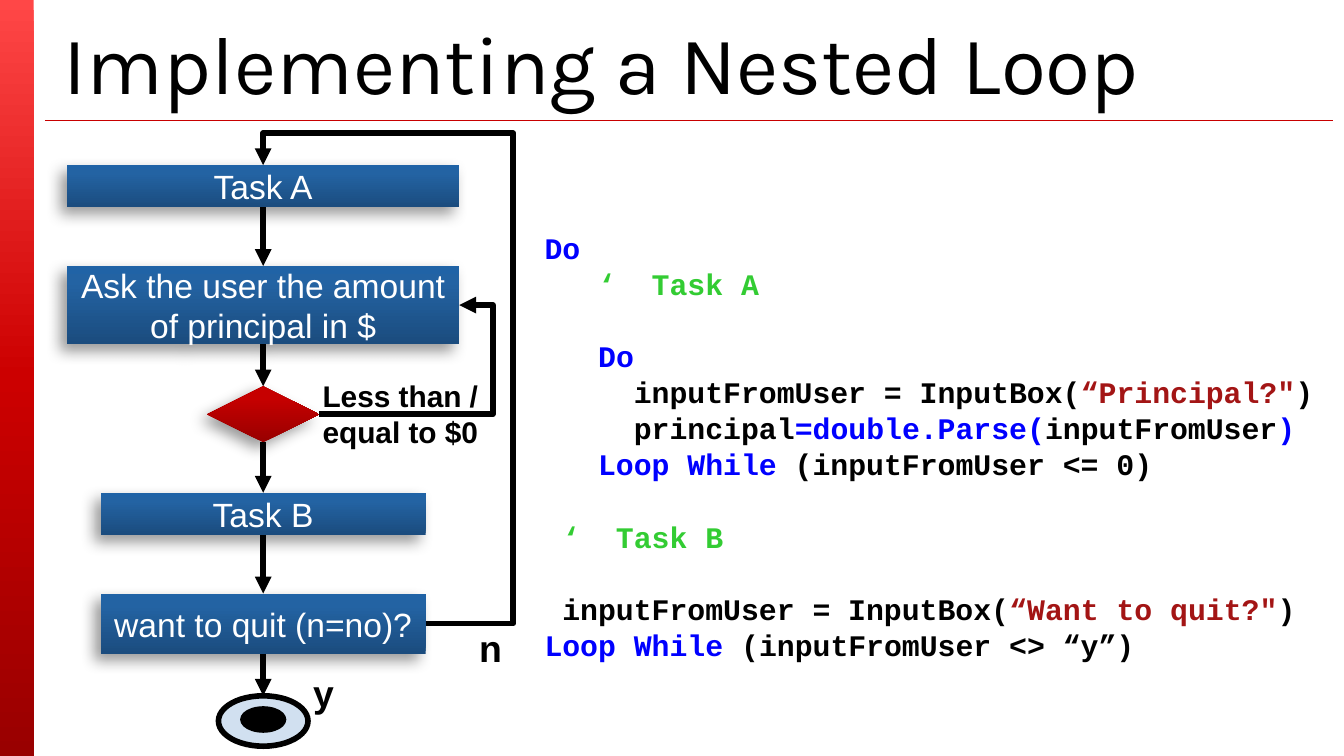
import pptx
import pptx.util
import pptx.dml.color
import pptx.enum.shapes
import pptx.enum.text
import pptx.oxml
import pptx.oxml.ns

RGB = pptx.dml.color.RGBColor
SHAPE = pptx.enum.shapes.MSO_SHAPE
LINK = pptx.enum.shapes.MSO_CONNECTOR
ANCHOR = pptx.enum.text.MSO_ANCHOR
ALIGN = pptx.enum.text.PP_ALIGN
qn = pptx.oxml.ns.qn

PX = 9525  # EMU per px, 96 px to the inch
TOP, LEFT, BOTTOM, RIGHT = range(4)  # connection sites

BLACK = RGB(0x00, 0x00, 0x00)
WHITE = RGB(0xFF, 0xFF, 0xFF)
RULE_RED = RGB(0xC8, 0x00, 0x00)
PALE_BLUE = RGB(0xD1, 0xE0, 0xF0)
KEYWORD = RGB(0x00, 0x00, 0xFF)
COMMENT = RGB(0x33, 0xCC, 0x33)
STRING = RGB(0xA3, 0x15, 0x15)

# Gradient stops: percent and colour
BAR_STOPS = [(0, RGB(0xFF, 0x47, 0x47)), (50, RGB(0xCC, 0x00, 0x00)),
             (100, RGB(0x99, 0x00, 0x00))]
BLUE_STOPS = [(0, RGB(0x1B, 0x4C, 0x7E)), (80, RGB(0x23, 0x63, 0xA3)),
              (100, RGB(0x20, 0x63, 0xA6))]
RED_STOPS = [(0, RGB(0x98, 0x00, 0x00)), (80, RGB(0xC6, 0x00, 0x00)),
             (100, RGB(0xC7, 0x00, 0x00))]

# Code lines: blank lines above, then (text, colour) runs
CODE = [
    (0, [("Do", KEYWORD)]),
    (0, [("   ‘  Task A", COMMENT)]),
    (1, [("   ", BLACK), ("Do", KEYWORD)]),
    (0, [("     inputFromUser = InputBox(", BLACK), ("“Principal?\"", STRING),
         (")", BLACK)]),
    (0, [("     principal", BLACK), ("=double.Parse(", KEYWORD),
         ("inputFromUser", BLACK), (")", KEYWORD)]),
    (0, [("   Loop While", KEYWORD), (" (inputFromUser <= 0)", BLACK)]),
    (1, [(" ‘  Task B", COMMENT)]),
    (1, [(" inputFromUser = InputBox(", BLACK), ("“Want to quit?\"", STRING),
         (")", BLACK)]),
    (0, [("Loop While", KEYWORD), (" (inputFromUser <> “y”)", BLACK)]),
]
CODE_PITCH = 19.3  # points per code line


def px(*lengths):
    return [pptx.util.Emu(n * PX) for n in lengths]


def xml(tag, body):
    ns = pptx.oxml.ns.nsdecls("a")
    return pptx.oxml.parse_xml(f"<a:{tag} {ns} {body}")


def add_run(p, text, font, size, color, bold=False):
    r = p.add_run()
    r.text = text
    r.font.name = font
    r.font.size = pptx.util.Pt(size)
    r.font.color.rgb = color
    r.font.bold = bold


def add_label(s, box, text, size, font="Arial", bold=True, align=ALIGN.LEFT):
    tf = s.shapes.add_textbox(*px(*box)).text_frame
    tf.word_wrap = True
    p = tf.paragraphs[0]
    p.alignment = align
    add_run(p, text, font, size, BLACK, bold)
    return tf


def add_plain(s, kind, box, fill, line_width=0):
    sp = s.shapes.add_shape(kind, *px(*box))
    sp.shadow.inherit = False
    if isinstance(fill, list):
        sp.fill.gradient()
        stops = sp.element.spPr.find(".//" + qn("a:gsLst"))
        for stop in list(stops):
            stops.remove(stop)
        for percent, color in fill:
            stops.append(xml("gs", f'pos="{percent * 1000}">'
                             f'<a:srgbClr val="{color}"/></a:gs>'))
    else:
        sp.fill.solid()
        sp.fill.fore_color.rgb = fill
    if line_width:
        sp.line.color.rgb = BLACK
        sp.line.width = pptx.util.Pt(line_width)
    else:
        sp.line.fill.background()
    return sp


def add_node(s, kind, box, stops, text=""):
    """Flowchart step with a soft shadow to the lower left."""
    sp = add_plain(s, kind, box, stops)
    sp.fill.gradient_angle = 90
    sp.element.spPr.find(qn("a:effectLst")).append(xml(
        "outerShdw", 'blurRad="101600" dist="63500" dir="8100000" '
        'algn="ctr" rotWithShape="0"><a:srgbClr val="000000">'
        '<a:alpha val="40000"/></a:srgbClr></a:outerShdw>'))
    if text:
        tf = sp.text_frame
        tf.word_wrap = True
        tf.vertical_anchor = ANCHOR.MIDDLE
        tf.margin_left, tf.margin_top, tf.margin_right, tf.margin_bottom = px(5, 5, 5, 5)
        p = tf.paragraphs[0]
        p.alignment = ALIGN.CENTER
        add_run(p, text, "Arial", 18, WHITE)
    return sp


def add_line(s, kind, ends, color, width):
    cxn = s.shapes.add_connector(kind, *px(*ends))
    cxn.line.color.rgb = color
    cxn.line.width = pptx.util.Pt(width)
    cxn.element.spPr.append(xml("effectLst", "/>"))
    return cxn


def add_arrow(s, start, start_site, end, end_site, bends=()):
    """Arrow joined to two steps; bends are the elbow adjustments."""
    kind = LINK.ELBOW if bends else LINK.STRAIGHT
    cxn = add_line(s, kind, (0, 0, 0, 0), BLACK, 3)
    cxn.begin_connect(start, start_site)
    cxn.end_connect(end, end_site)
    cxn.line.fill  # line element is in place for the arrowhead
    spPr = cxn.element.spPr
    spPr.find(qn("a:ln")).append(xml("tailEnd", 'type="triangle"/>'))
    if bends:
        geom = spPr.find(qn("a:prstGeom"))
        geom.set("prst", f"bentConnector{len(bends) + 2}")
        guides = geom.find(qn("a:avLst"))
        for i, bend in enumerate(bends, 1):
            guides.append(xml("gd", f'name="adj{i}" fmla="val {round(bend * 100000)}"/>'))


def add_code(s, box):
    tf = s.shapes.add_textbox(*px(*box)).text_frame
    tf.word_wrap = True
    tf.vertical_anchor = ANCHOR.BOTTOM
    tf.margin_left = tf.margin_top = tf.margin_right = tf.margin_bottom = 0
    for i, (blank, runs) in enumerate(CODE):
        p = tf.add_paragraph() if i else tf.paragraphs[0]
        p.line_spacing = pptx.util.Pt(CODE_PITCH)
        if blank:
            p.space_before = pptx.util.Pt(CODE_PITCH * blank)
        for text, color in runs:
            add_run(p, text, "Courier New", 16, color, True)


def main():
    prs = pptx.Presentation()
    prs.slide_width, prs.slide_height = px(960, 540)
    s = prs.slides.add_slide(prs.slide_layouts[6])

    # Side bar, title and rule
    bar = add_plain(s, SHAPE.RECTANGLE, (0, 0, 24, 540), BAR_STOPS)
    bar.fill.gradient_angle = 270
    add_line(s, LINK.STRAIGHT, (32, 86, 952, 86), RULE_RED, 0.75)
    title = add_label(s, (36, 14, 920, 51), "Implementing a Nested Loop", 44, "Karla", False)
    title.vertical_anchor = ANCHOR.MIDDLE
    title.margin_top = px(14)[0]

    # Flowchart steps, from top to bottom
    process = SHAPE.FLOWCHART_PROCESS
    task_a = add_node(s, process, (48, 118, 280, 30), BLUE_STOPS, "Task A")
    ask = add_node(s, process, (48, 190, 280, 56), BLUE_STOPS,
                   "Ask the user the amount of principal in $")
    check = add_node(s, SHAPE.FLOWCHART_DECISION, (148, 276, 80, 40), RED_STOPS)
    task_b = add_node(s, process, (72, 352, 232, 30), BLUE_STOPS, "Task B")
    quit_step = add_node(s, process, (72, 424, 232, 43), BLUE_STOPS, "want to quit (n=no)?")
    end = add_plain(s, SHAPE.OVAL, (156, 497, 64, 36), PALE_BLUE, 3)
    add_plain(s, SHAPE.OVAL, (172, 505, 32, 18), BLACK, 0.75)

    # Downward flow, then the inner and outer loops
    steps = [task_a, ask, check, task_b, quit_step, end]
    for upper, lower in zip(steps, steps[1:]):
        add_arrow(s, upper, BOTTOM, lower, TOP)
    add_arrow(s, check, RIGHT, ask, RIGHT, (1.24,))
    add_arrow(s, quit_step, RIGHT, task_a, TOP, (-0.54, 1.07))

    # Branch labels
    add_label(s, (221, 265, 139, 61), "Less than / equal to $0", 16)
    add_label(s, (304, 442, 64, 42), "n", 20, align=ALIGN.RIGHT)
    add_label(s, (184, 474, 64, 42), "y", 20, align=ALIGN.RIGHT)

    # Code listing
    add_code(s, (389, 111, 568, 362))

    prs.save("out.pptx")


if __name__ == "__main__":
    main()
